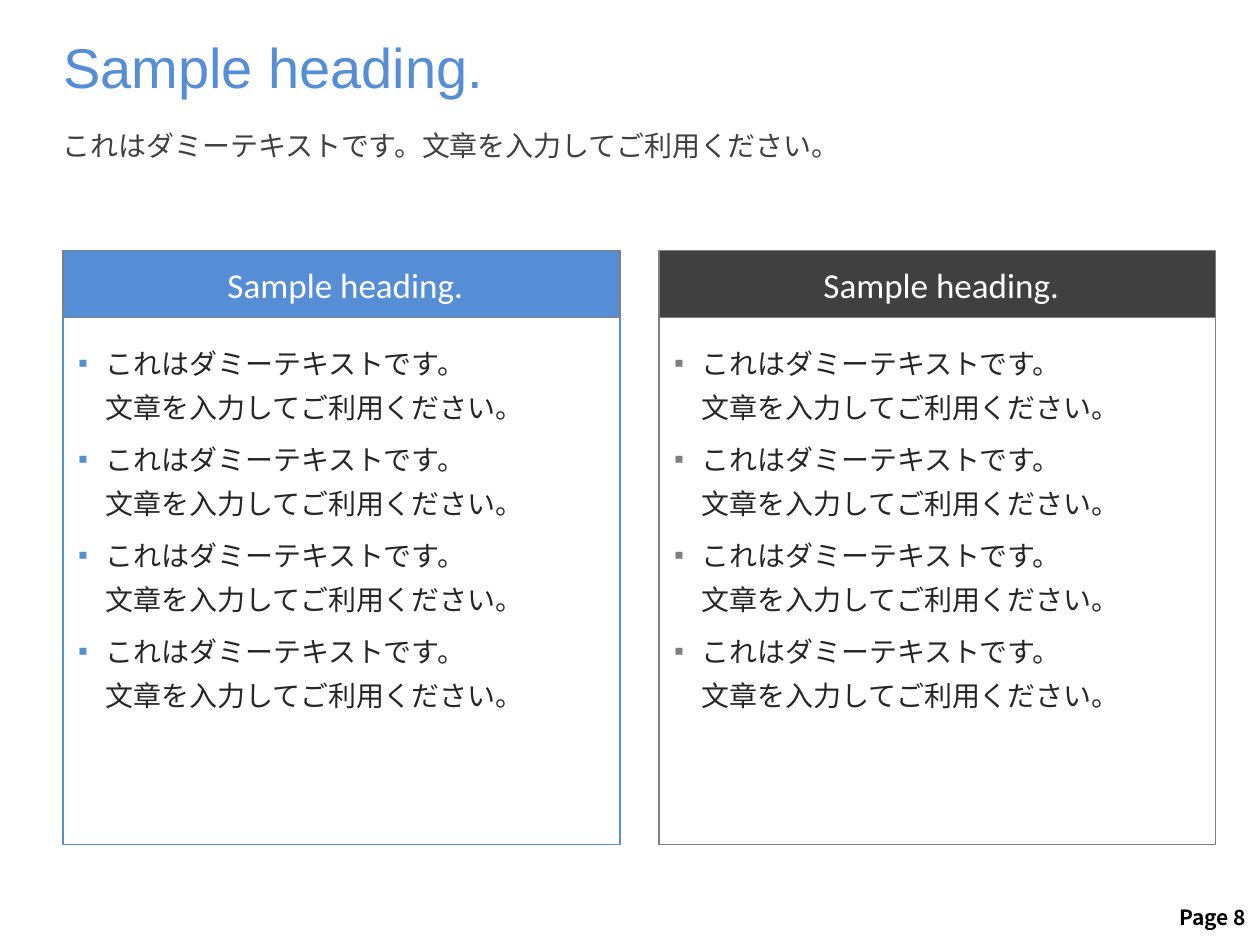
import copy

import pptx
import pptx.util
from lxml import etree
from pptx.dml.color import RGBColor
from pptx.enum.shapes import MSO_SHAPE
from pptx.enum.text import MSO_ANCHOR, PP_ALIGN
from pptx.oxml.ns import qn
from pptx.util import Inches

COLORS = {
    "blue": "558ED5",
    "dark": "404040",
    "text": "262626",
    "gray": "808080",
    "outline": "7F7F7F",
    "white": "FFFFFF",
    "black": "000000",
}
HEADING = "Sample heading."
LEAD = "これはダミーテキストです。文章を入力してご利用ください。"
BULLETS = ["これはダミーテキストです。\n文章を入力してご利用ください。"] * 4


def rgb(name):
    return RGBColor.from_string(COLORS[name])


def add_bullet(paragraph, color):
    properties = paragraph._p.get_or_add_pPr()
    properties.set("marL", str(Inches(0.22)))
    properties.set("indent", str(Inches(-0.22)))
    bullet_color = etree.SubElement(properties, qn("a:buClr"))
    etree.SubElement(bullet_color, qn("a:srgbClr"), val=COLORS[color])
    etree.SubElement(properties, qn("a:buFont"), typeface="Arial")
    etree.SubElement(properties, qn("a:buChar"), char="▪")


def write_text(shape, paragraphs, size, color, font="Calibri", bold=False,
               align=PP_ALIGN.LEFT, anchor=MSO_ANCHOR.TOP, wrap=True,
               insets=(0, 0.05, 0.1, 0.05), bullet=None, line_spacing=None,
               space_before=0):
    """Fill a shape with paragraphs; insets are left, top, right, bottom in inches."""
    frame = shape.text_frame
    frame.word_wrap = wrap
    frame.vertical_anchor = anchor
    (frame.margin_left, frame.margin_top,
     frame.margin_right, frame.margin_bottom) = map(Inches, insets)
    for index, text in enumerate(paragraphs):
        paragraph = frame.add_paragraph() if index else frame.paragraphs[0]
        if bullet:
            add_bullet(paragraph, bullet)
        paragraph.text = text
        paragraph.alignment = align
        paragraph.line_spacing = line_spacing
        paragraph.space_before = pptx.util.Pt(space_before if index else 0)
        for run in paragraph.runs:
            run.font.size = pptx.util.Pt(size)
            run.font.name = font
            run.font.bold = bold
            run.font.color.rgb = rgb(color)
            etree.SubElement(run.font._element, qn("a:ea"), typeface=font)
        for line_break in paragraph._p.findall(qn("a:br")):
            line_break.insert(0, copy.deepcopy(paragraph.runs[0].font._element))


def add_text_box(slide, left, top, width, height, text, **text_format):
    box = slide.shapes.add_textbox(left, top, width, height)
    write_text(box, [text], **text_format)


def add_rectangle(slide, left, top, width, height, fill, line):
    shape = slide.shapes.add_shape(MSO_SHAPE.RECTANGLE, left, top, width, height)
    shape.shadow.inherit = False
    shape.fill.solid()
    shape.fill.fore_color.rgb = rgb(fill)
    shape.line.color.rgb = rgb(line)
    shape.line.width = pptx.util.Pt(0.75)
    return shape


def add_header(slide, left, top, width):
    title = slide.shapes.title
    title.left, title.top, title.width, title.height = left, top, width, Inches(0.88)
    write_text(title, [HEADING], size=32, color="blue", font="Arial")
    add_text_box(slide, left, top + Inches(0.76), width, Inches(0.6), LEAD,
                 size=16, color="dark")


def add_panel(slide, left, top, width, height, heading_fill, accent):
    """Place a heading bar above a bulleted, half-transparent body."""
    bar_height = Inches(0.53)
    body = add_rectangle(slide, left, top + bar_height, width, height - bar_height,
                         "white", accent)
    fill_color = body._element.spPr.find(qn("a:solidFill"))[0]
    etree.SubElement(fill_color, qn("a:alpha"), val="50000")
    write_text(body, BULLETS, size=16, color="text", insets=(0.12, 0.15, 0, 0),
               bullet=accent, line_spacing=1.3, space_before=5)
    bar = add_rectangle(slide, left, top, width, bar_height, heading_fill, "outline")
    write_text(bar, [HEADING], size=20, color="white", align=PP_ALIGN.CENTER,
               anchor=MSO_ANCHOR.MIDDLE, insets=(0.16, 0.08, 0.1, 0.08))


def main():
    presentation = pptx.Presentation()
    presentation.slide_width = Inches(10)
    presentation.slide_height = Inches(7.5)
    slide = presentation.slides.add_slide(presentation.slide_layouts[5])

    margin, panel_width, gap = Inches(0.5), Inches(4.42), Inches(0.31)
    add_header(slide, margin, Inches(0.21), Inches(9.14))
    panels = [("blue", "gray", "blue"), ("dark", "outline", "gray")]
    for column, (heading_fill, _, accent) in enumerate(panels):
        add_panel(slide, margin + column * (panel_width + gap), Inches(1.99),
                  panel_width, Inches(4.71), heading_fill, accent)
    add_text_box(slide, Inches(9.13), Inches(7.13), Inches(0.86), Inches(0.3),
                 "Page 8", size=12, color="black", font="Noto Sans CJK JP",
                 bold=True, align=PP_ALIGN.RIGHT, anchor=MSO_ANCHOR.MIDDLE,
                 wrap=False, insets=(0.1, 0.05, 0.1, 0.05))
    presentation.save("out.pptx")


if __name__ == "__main__":
    main()
